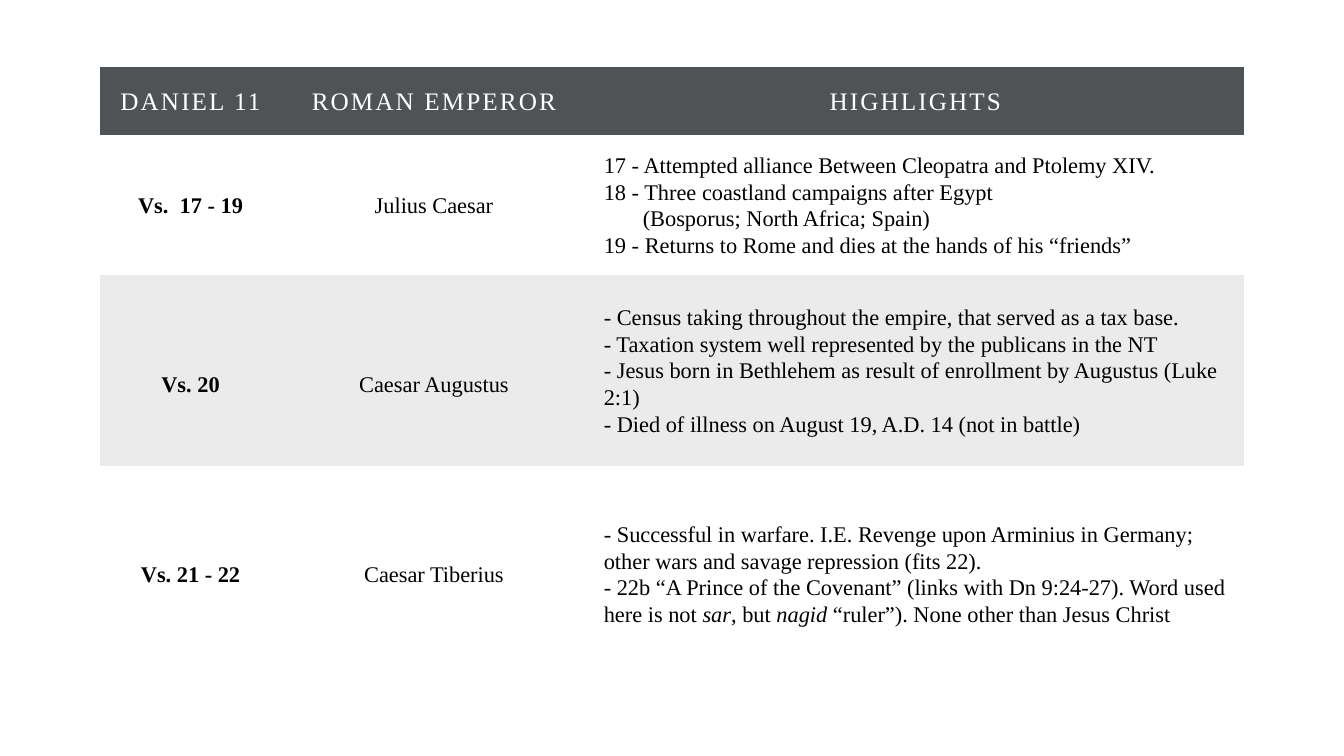
from dataclasses import dataclass

from pptx import Presentation
from pptx.dml.color import RGBColor
from pptx.enum.text import MSO_ANCHOR, PP_ALIGN
from pptx.util import Inches, Pt


@dataclass(frozen=True)
class Theme:
    font: str = "Times New Roman"
    header_size: int = 18
    body_size: int = 16
    line_spacing: float = 1.07
    header_tracking: int = 150
    header_fill: str = "505356"
    header_text: str = "FFFFFF"
    body_text: str = "000000"
    band_fill: str = "EBEBEB"
    table_style: str = "{2D5ABB26-0587-4C30-8999-92F81FD0307C}"  # no style, no grid


@dataclass(frozen=True)
class Line:
    """One paragraph; words between asterisks are italic."""
    text: str
    indent: float = 0


class SlideBuilder:
    """Lengths are columns and rows of a 100 by 100 grid over the slide."""

    def __init__(self, prs, theme):
        self.theme = theme
        self.s = prs.slides.add_slide(prs.slide_layouts[6])
        self.col = prs.slide_width / 100
        self.row = prs.slide_height / 100

    def x(self, columns):
        return round(columns * self.col)

    def y(self, rows):
        return round(rows * self.row)

    def table(self, left, top, widths, heights):
        frame = self.s.shapes.add_table(
            len(heights), len(widths), self.x(left), self.y(top),
            self.x(sum(widths)), self.y(sum(heights)))
        table = frame.table
        table.first_row = table.horz_banding = False
        table._tbl.tblPr[0].text = self.theme.table_style
        for column, width in zip(table.columns, widths):
            column.width = self.x(width)
        for row, height in zip(table.rows, heights):
            row.height = self.y(height)
        return table

    def cell(self, cell, lines, header=False, bold=False, centred=True, fill=None, drop=0):
        """Fill a cell; drop adds rows to the top margin."""
        cell.vertical_anchor = MSO_ANCHOR.MIDDLE
        cell.margin_left = cell.margin_right = cell.margin_bottom = Inches(0.17)
        cell.margin_top = Inches(0.17) + self.y(drop)
        if fill:
            cell.fill.solid()
            cell.fill.fore_color.rgb = RGBColor.from_string(fill)
        else:
            cell.fill.background()
        tf = cell.text_frame
        for i, line in enumerate(lines):
            p = tf.add_paragraph() if i else tf.paragraphs[0]
            p.alignment = PP_ALIGN.CENTER if centred else PP_ALIGN.LEFT
            p.line_spacing = self.theme.line_spacing
            if line.indent:
                p._p.get_or_add_pPr().set("marL", str(self.x(line.indent)))
            for j, piece in enumerate(line.text.split("*")):
                self.run(p, piece, header, bold, italic=j % 2 == 1)

    def run(self, p, text, header, bold, italic):
        t = self.theme
        r = p.add_run()
        r.text = text
        r.font.name = t.font
        r.font.size = Pt(t.header_size if header else t.body_size)
        r.font.bold = bold
        r.font.italic = italic
        r.font.color.rgb = RGBColor.from_string(t.header_text if header else t.body_text)
        if header:
            r._r.get_or_add_rPr().set("spc", str(t.header_tracking))


HEADINGS = ["DANIEL 11", "ROMAN EMPEROR", "HIGHLIGHTS"]
EMPERORS = [
    ("Vs.  17 - 19", "Julius Caesar", [
        Line("17 - Attempted alliance Between Cleopatra and Ptolemy XIV."),
        Line("18 - Three coastland campaigns after Egypt"),
        Line("(Bosporus; North Africa; Spain)", indent=2.9),
        Line("19 - Returns to Rome and dies at the hands of his “friends”"),
    ]),
    ("Vs. 20", "Caesar Augustus", [
        Line("- Census taking throughout the empire, that served as a tax base."),
        Line("- Taxation system well represented by the publicans in the NT"),
        Line("- Jesus born in Bethlehem as result of enrollment by Augustus (Luke 2:1)"),
        Line("- Died of illness on August 19, A.D. 14 (not in battle)"),
    ]),
    ("Vs. 21 - 22", "Caesar Tiberius", [
        Line("- Successful in warfare. I.E. Revenge upon Arminius in Germany; "
             "other wars and savage repression (fits 22)."),
        Line("- 22b “A Prince of the Covenant” (links with Dn 9:24-27). Word used "
             "here is not *sar*, but *nagid* “ruler”). None other than Jesus Christ"),
    ]),
]


def main():
    prs = Presentation()
    prs.slide_width, prs.slide_height = Inches(13.33), Inches(7.5)
    theme = Theme()
    slide = SlideBuilder(prs, theme)
    table = slide.table(7.43, 8.87, [13.5, 22.73, 48.91], [8.93, 18.4, 25.2, 28.67])

    for c, heading in enumerate(HEADINGS):
        slide.cell(table.cell(0, c), [Line(heading)], header=True, fill=theme.header_fill)
    for r, (verses, emperor, highlights) in enumerate(EMPERORS, start=1):
        banded = r % 2 == 0
        fill = theme.band_fill if banded else None
        drop = 3.6 if banded else 0
        slide.cell(table.cell(r, 0), [Line(verses)], bold=True, fill=fill, drop=drop)
        slide.cell(table.cell(r, 1), [Line(emperor)], fill=fill, drop=drop)
        slide.cell(table.cell(r, 2), highlights, centred=False, fill=fill)

    prs.save("out.pptx")


if __name__ == "__main__":
    main()
